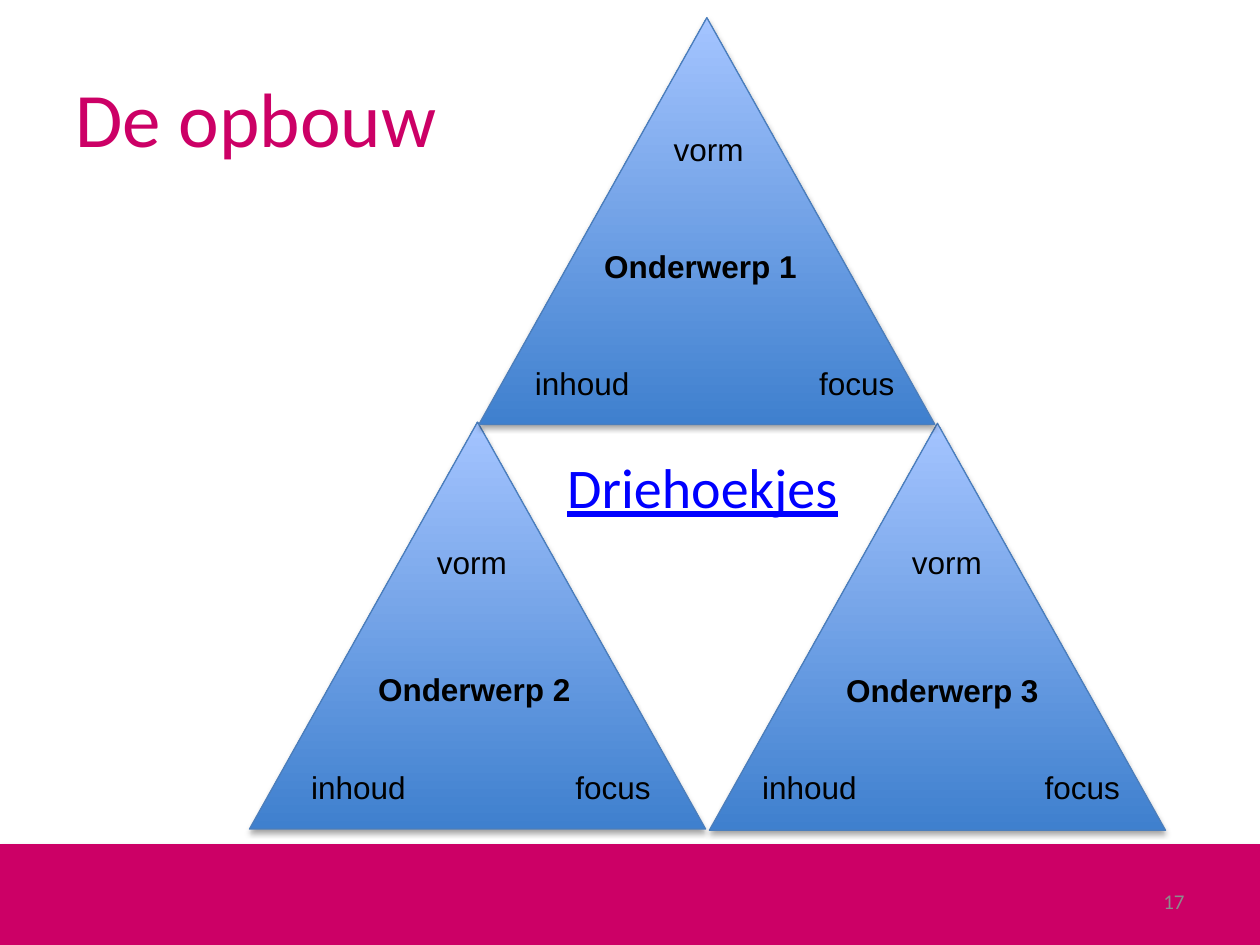
"""Build the slide with three stacked topic triangles."""
import dataclasses
import pptx
import pptx.util
import pptx.dml.color
import pptx.enum.shapes
import pptx.enum.text
import pptx.oxml
import pptx.oxml.ns

Align = pptx.enum.text.PP_ALIGN
Anchor = pptx.enum.text.MSO_ANCHOR
Kind = pptx.enum.shapes.MSO_SHAPE
Pt = pptx.util.Pt
COLS, ROWS = 100, 75


@dataclasses.dataclass(frozen=True)
class Theme:
    """Colours, fonts and type sizes of the deck."""
    pink: str = "CC0066"
    ink: str = "000000"
    link: str = "0000FF"
    grey: str = "8C8C8C"
    edge: str = "4B7EBC"
    deep: str = "3F80CE"
    pale: str = "A4C4FF"
    head: str = "Calibri"
    body: str = "Arial"
    title: int = 44
    lead: int = 32
    label: int = 18
    small: int = 12


def tint(code):
    """Return a colour from its hex code."""
    return pptx.dml.color.RGBColor.from_string(code)


class Page:
    """Hold the theme and the current slide."""

    def __init__(self, deck, theme):
        """Add a slide with a title and a body."""
        self.theme = theme
        self.wide, self.high = deck.slide_width, deck.slide_height
        self.slide = deck.slides.add_slide(deck.slide_layouts[1])

    def box(self, x, y, w, h):
        """Turn columns and rows into lengths."""
        across, down = self.wide / COLS, self.high / ROWS
        return int(x * across), int(y * down), int(w * across), int(h * down)

    def fill_in(self, frame, text, size, code, font, align=Align.CENTER, bold=False, line=False):
        """Put one styled run in a frame."""
        frame.word_wrap = True
        para = frame.paragraphs[0]
        para.alignment = align
        para.space_before = Pt(0)
        run = para.add_run()
        run.text = text
        run.font.size, run.font.name = Pt(size), font
        run.font.bold, run.font.underline = bold, line
        run.font.color.rgb = tint(code)

    def holder(self, index, area, anchor, *args, **style):
        """Move and fill a placeholder."""
        shape = self.slide.placeholders[index]
        shape.left, shape.top, shape.width, shape.height = self.box(*area)
        frame = shape.text_frame
        frame.auto_size = pptx.enum.text.MSO_AUTO_SIZE.NONE
        frame.vertical_anchor = anchor
        self.fill_in(frame, *args, **style)
        return shape

    def title(self, text, area):
        """Set the title."""
        look = self.theme
        self.holder(0, area, Anchor.MIDDLE, text, look.title, look.pink, look.head, align=Align.LEFT)

    def lead(self, text, area):
        """Set the body as one underlined line without a bullet."""
        look = self.theme
        shape = self.holder(1, area, Anchor.TOP, text, look.lead, look.link, look.head, line=True)
        shape.text_frame.margin_right = pptx.util.Inches(0.2)
        props = shape.text_frame.paragraphs[0]._p.get_or_add_pPr()
        props.set("marL", "0")
        props.set("indent", "0")
        props.append(pptx.oxml.parse_xml(f"<a:buNone {pptx.oxml.ns.nsdecls('a')}/>"))

    def shape(self, kind, area):
        """Add a preset shape with a soft shadow."""
        shape = self.slide.shapes.add_shape(kind, *self.box(*area))
        shape.shadow.inherit = False
        glow = pptx.oxml.parse_xml(
            f'<a:outerShdw {pptx.oxml.ns.nsdecls("a")} blurRad="40000" dist="23000" dir="5400000" '
            f'rotWithShape="0"><a:srgbClr val="{self.theme.ink}"><a:alpha val="35000"/></a:srgbClr></a:outerShdw>')
        shape._element.spPr.find(pptx.oxml.ns.qn("a:effectLst")).append(glow)
        return shape

    def band(self, area):
        """Add the plain footer band."""
        shape = self.shape(Kind.RECTANGLE, area)
        shape.fill.solid()
        shape.fill.fore_color.rgb = tint(self.theme.pink)
        shape.line.fill.background()

    def peak(self, x, y):
        """Add a shaded triangle."""
        shape = self.shape(Kind.ISOSCELES_TRIANGLE, (x, y, 36.2, 32.3))
        shape.fill.gradient()
        shape.fill.gradient_angle = 90
        for stop, code in zip(shape.fill.gradient_stops, (self.theme.deep, self.theme.pale)):
            stop.color.rgb = tint(code)
        shape.line.color.rgb = tint(self.theme.edge)
        shape.line.width = Pt(0.75)

    def text(self, area, anchor, *args, **style):
        """Add a text box."""
        frame = self.slide.shapes.add_textbox(*self.box(*area)).text_frame
        frame.vertical_anchor = anchor
        self.fill_in(frame, *args, **style)

    def label(self, text, x, y, w, bold=False):
        """Add a triangle label."""
        look = self.theme
        self.text((x, y, w, 4), Anchor.TOP, text, look.label, look.ink, look.body, bold=bold)

    def number(self, text, area):
        """Add the page number."""
        look = self.theme
        self.text(area, Anchor.MIDDLE, text, look.small, look.grey, look.head, align=Align.RIGHT)


PEAKS = [(38, 1.4), (19.8, 33.5), (56.3, 33.6)]
NAMES = [(41.8, 19.1, 27.6), (28.6, 52.7, 18.1), (61.8, 52.8, 26)]
SIDES = {
    "vorm": [(49.1, 9.8, 14.3), (30.3, 42.6, 14.3), (68, 42.6, 14.3)],
    "inhoud": [(35.3, 28.4, 21.8), (19.4, 60.5, 18.1), (57.1, 60.5, 14.3)],
    "focus": [(59.4, 28.4, 17.2), (37.9, 60.5, 21.5), (74.5, 60.5, 22.8)],
}


def main():
    """Build and save the deck."""
    deck = pptx.Presentation()
    deck.slide_width, deck.slide_height = pptx.util.Inches(10), pptx.util.Inches(7.5)
    page = Page(deck, Theme())
    page.band((0, 67, 100, 8))
    page.title("De opbouw", (5, 3, 90, 12.5))
    page.lead("Driehoekjes", (42.8, 35.4, 26.9, 9))
    page.number("17", (71.7, 69.5, 23.3, 4))
    for spot in reversed(PEAKS):
        page.peak(*spot)
    for count, spot in enumerate(NAMES, 1):
        page.label(f"Onderwerp {count}", *spot, bold=True)
    for word, spots in SIDES.items():
        for spot in spots:
            page.label(word, *spot)
    deck.save("out.pptx")


if __name__ == "__main__":
    main()
